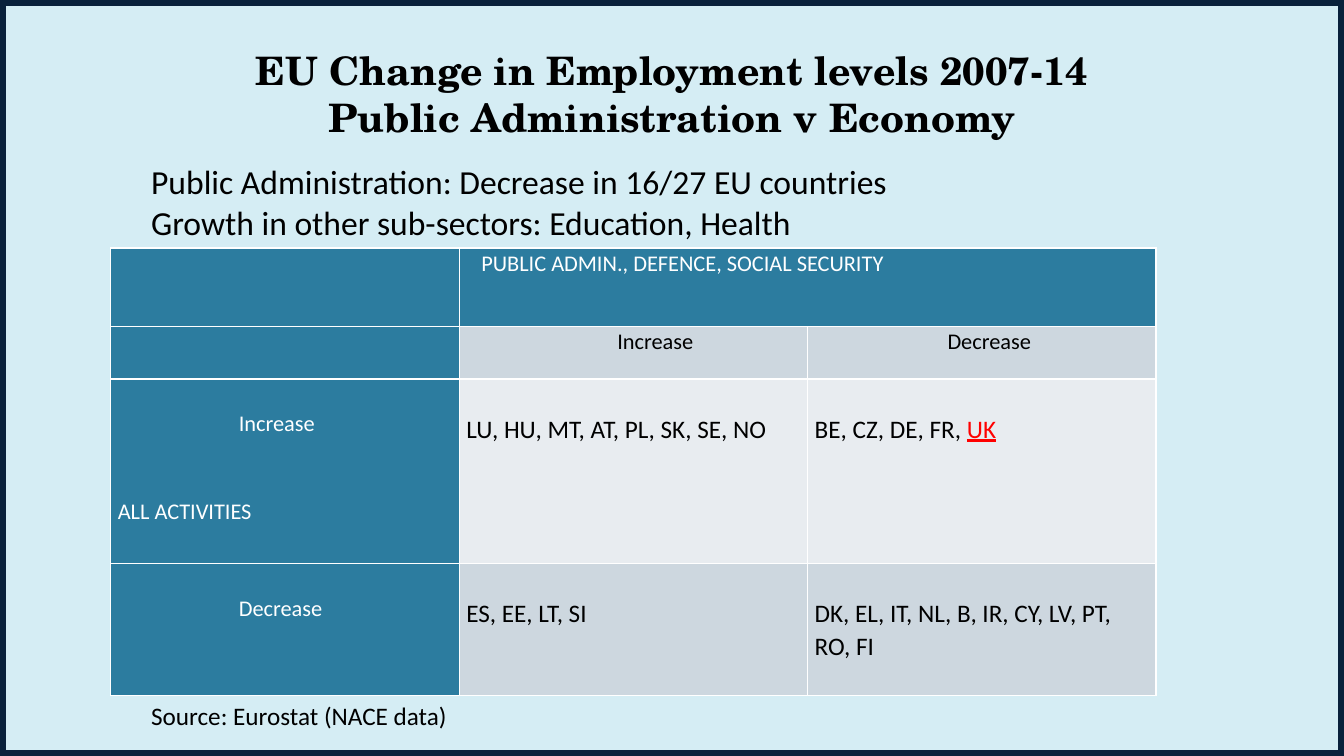
from dataclasses import dataclass

from lxml.etree import SubElement
from pptx import Presentation
from pptx.dml.color import RGBColor
from pptx.enum.shapes import MSO_SHAPE
from pptx.enum.text import MSO_ANCHOR, MSO_AUTO_SIZE, PP_ALIGN
from pptx.oxml.ns import qn
from pptx.util import Cm, Pt


@dataclass(frozen=True)
class Theme:
    background: str = "D5EDF4"
    frame: str = "09213B"
    header: str = "2C7C9F"
    band_dark: str = "CDD7DF"
    band_light: str = "E8ECF0"
    white: str = "FFFFFF"
    black: str = "000000"
    highlight: str = "FF0000"
    title_font: str = "TeX Gyre Schola"
    body_font: str = "Calibri"
    title_size: int = 28
    lead_size: int = 24
    body_size: int = 18
    label_size: int = 16


@dataclass
class Line:
    """One paragraph; a part of its text may be highlighted at the end."""
    text: str
    size: int
    color: str
    highlighted: str = ""
    indent: float = 0
    before: float = 0
    align: PP_ALIGN = PP_ALIGN.LEFT


class SlideBuilder:
    def __init__(self, slide, theme):
        self.slide, self.theme = slide, theme
        slide.background.fill.solid()
        slide.background.fill.fore_color.rgb = RGBColor.from_string(theme.background)

    def run(self, paragraph, text, size, color, font=None, bold=False):
        run = paragraph.add_run()
        run.text = text
        run.font.size = Pt(size)
        run.font.name = font or self.theme.body_font
        run.font.bold = bold
        run.font.color.rgb = RGBColor.from_string(color)
        return run

    def lines(self, text_frame, lines, spacing=1.0):
        for number, line in enumerate(lines):
            paragraph = text_frame.add_paragraph() if number else text_frame.paragraphs[0]
            paragraph.alignment = line.align
            paragraph.line_spacing = spacing
            paragraph.space_before = Pt(line.before)
            paragraph._p.get_or_add_pPr().set("marL", str(Cm(line.indent)))
            self.run(paragraph, line.text, line.size, line.color)
            if line.highlighted:
                marked = self.run(paragraph, line.highlighted, line.size, self.theme.highlight)
                marked.font.underline = True

    def frame(self, width, height):
        border = self.slide.shapes.add_shape(MSO_SHAPE.RECTANGLE, 0, 0, width, height)
        border.shadow.inherit = False
        border.fill.background()
        border.line.color.rgb = RGBColor.from_string(self.theme.frame)
        border.line.width = Pt(8)
        self.slide.shapes._spTree.insert(2, border._element)

    def title(self, left, top, width, height, rows):
        title = self.slide.shapes.title
        title.left, title.top, title.width, title.height = map(Cm, (left, top, width, height))
        title.text_frame.vertical_anchor = MSO_ANCHOR.MIDDLE
        paragraph = title.text_frame.paragraphs[0]
        paragraph.alignment = PP_ALIGN.CENTER
        for number, row in enumerate(rows):
            if number:
                paragraph.add_line_break()
            self.run(paragraph, row, self.theme.title_size, self.theme.black,
                     self.theme.title_font, bold=True)

    def text(self, left, top, width, height, lines):
        box = self.slide.shapes.add_textbox(*map(Cm, (left, top, width, height)))
        box.text_frame.word_wrap = True
        box.text_frame.auto_size = MSO_AUTO_SIZE.SHAPE_TO_FIT_TEXT
        self.lines(box.text_frame, lines)

    def table(self, left, top, column_width, row_heights, column_count):
        table = self.slide.shapes.add_table(
            len(row_heights), column_count, Cm(left), Cm(top),
            Cm(column_width * column_count), Cm(sum(row_heights))).table
        for column in table.columns:
            column.width = Cm(column_width)
        for row, height in zip(table.rows, row_heights):
            row.height = Cm(height)
        return table

    def cell(self, cell, fill, lines=(), top=0):
        cell.margin_left = cell.margin_right = Cm(0.18)
        cell.margin_top, cell.margin_bottom = Cm(top), 0
        properties = cell._tc.get_or_add_tcPr()
        for side in ("a:lnL", "a:lnR", "a:lnT", "a:lnB"):
            edge = SubElement(properties, qn(side), w=str(Pt(1)))
            solid = SubElement(edge, qn("a:solidFill"))
            SubElement(solid, qn("a:srgbClr"), val=self.theme.white)
        cell.fill.solid()
        cell.fill.fore_color.rgb = RGBColor.from_string(fill)
        self.lines(cell.text_frame, lines, spacing=1.07)


def main():
    theme = Theme()
    presentation = Presentation()
    presentation.slide_width, presentation.slide_height = Cm(33.87), Cm(19.05)
    builder = SlideBuilder(presentation.slides.add_slide(presentation.slide_layouts[5]), theme)
    builder.frame(presentation.slide_width, presentation.slide_height)
    builder.title(1.69, 0.76, 30.48, 3.18, [
        "EU Change in Employment levels 2007-14", "Public Administration v Economy"])

    def label(text, color=theme.white, **layout):
        return Line(text, theme.label_size, color, **layout)

    def countries(text, highlighted=""):
        return [Line(text, theme.body_size, theme.black, highlighted)]

    employment = builder.table(2.79, 6.25, 8.78, [1.98, 1.32, 4.65, 3.33], 3)
    employment.cell(0, 1).merge(employment.cell(0, 2))
    row_label_indent = 3.05
    label_top, countries_top = 0.74, 0.83

    builder.cell(employment.cell(0, 0), theme.header)
    builder.cell(employment.cell(0, 1), theme.header, [
        label("PUBLIC ADMIN., DEFENCE, SOCIAL SECURITY", indent=0.38)])
    builder.cell(employment.cell(0, 2), theme.header)

    builder.cell(employment.cell(1, 0), theme.header)
    for column, (heading, indent) in enumerate([("Increase", 1.11), ("Decrease", 0.38)], 1):
        builder.cell(employment.cell(1, column), theme.band_dark, [
            label(heading, theme.black, indent=indent, align=PP_ALIGN.CENTER)])

    body = [
        (theme.band_light,
         [label("Increase", indent=row_label_indent), label("ALL ACTIVITIES", before=41.8)],
         [countries("LU, HU, MT, AT, PL, SK, SE, NO"), countries("BE, CZ, DE, FR, ", "UK")]),
        (theme.band_dark,
         [label("Decrease", indent=row_label_indent)],
         [countries("ES, EE, LT, SI"),
          countries("DK, EL, IT, NL, B, IR, CY, LV, PT, RO, FI")]),
    ]
    for row, (band, row_labels, groups) in enumerate(body, 2):
        builder.cell(employment.cell(row, 0), theme.header, row_labels, label_top)
        for column, group in enumerate(groups, 1):
            builder.cell(employment.cell(row, column), band, group, countries_top)

    builder.text(3.56, 17.53, 20.04, 1.02, [
        Line("Source: Eurostat (NACE data)", theme.body_size, theme.black)])
    builder.text(3.56, 3.94, 27.2, 2.31, [
        Line(text, theme.lead_size, theme.black) for text in (
            "Public Administration: Decrease in 16/27 EU countries",
            "Growth in other sub-sectors: Education, Health")])
    presentation.save("out.pptx")


if __name__ == "__main__":
    main()
